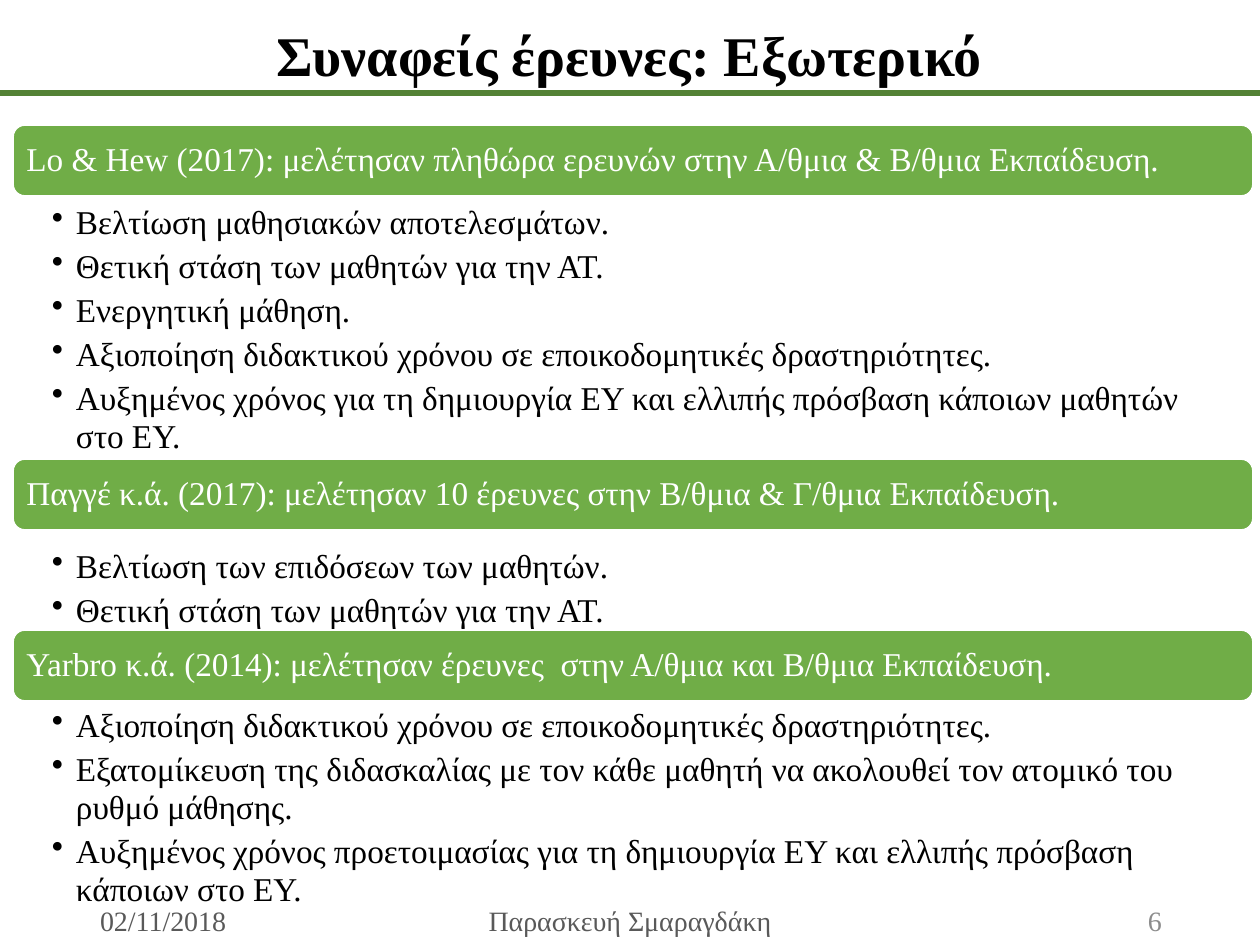
import dataclasses

import lxml.etree
import pptx
import pptx.dml.color
import pptx.enum.shapes
import pptx.enum.text
import pptx.oxml.ns
import pptx.util

PX_PER_INCH = 126
FONT = "Times New Roman"
COLOURS = {
    "bar": "70AD47",
    "rule": "548235",
    "white": "FFFFFF",
    "black": "000000",
    "footer": "595959",
    "number": "8C8C8C",
}
ALIGN = pptx.enum.text.PP_ALIGN
ANCHOR = pptx.enum.text.MSO_ANCHOR


@dataclasses.dataclass(frozen=True)
class Study:
    heading: str
    findings: tuple[str, ...]
    bar_top: int
    list_top: int
    list_height: int


@dataclasses.dataclass(frozen=True)
class Footer:
    text: str
    left: int
    width: int
    align: ALIGN
    colour: str


STUDIES = (
    Study(
        "Lo & Hew (2017): μελέτησαν πληθώρα ερευνών στην Α/θμια & Β/θμια Εκπαίδευση.",
        (
            "Βελτίωση μαθησιακών αποτελεσμάτων.",
            "Θετική στάση των μαθητών για την ΑΤ.",
            "Ενεργητική μάθηση.",
            "Αξιοποίηση διδακτικού χρόνου σε εποικοδομητικές δραστηριότητες.",
            "Αυξημένος χρόνος για τη δημιουργία ΕΥ και ελλιπής πρόσβαση κάποιων μαθητών στο ΕΥ.",
        ),
        bar_top=125, list_top=200, list_height=239,
    ),
    Study(
        "Παγγέ κ.ά. (2017): μελέτησαν 10 έρευνες στην Β/θμια & Γ/θμια Εκπαίδευση.",
        (
            "Βελτίωση των επιδόσεων των μαθητών.",
            "Θετική στάση των μαθητών για την ΑΤ.",
        ),
        bar_top=459, list_top=544, list_height=81,
    ),
    Study(
        "Yarbro κ.ά. (2014): μελέτησαν έρευνες  στην Α/θμια και Β/θμια Εκπαίδευση.",
        (
            "Αξιοποίηση διδακτικού χρόνου σε εποικοδομητικές δραστηριότητες.",
            "Εξατομίκευση της διδασκαλίας με τον κάθε μαθητή να ακολουθεί τον ατομικό του ρυθμό μάθησης.",
            "Αυξημένος χρόνος προετοιμασίας για τη δημιουργία ΕΥ και ελλιπής πρόσβαση κάποιων στο ΕΥ.",
        ),
        bar_top=630, list_top=703, list_height=203,
    ),
)
FOOTERS = (
    Footer("02/11/2018", 87, 284, ALIGN.LEFT, "footer"),
    Footer("Παρασκευή Σμαραγδάκη", 417, 426, ALIGN.CENTER, "footer"),
    Footer("6", 891, 284, ALIGN.RIGHT, "number"),
)
STUDY_LEFT, STUDY_WIDTH, BAR_HEIGHT = 13, 1240, 71


def px(length: int) -> pptx.util.Emu:
    return pptx.util.Emu(round(length * 914400 / PX_PER_INCH))


def box(left: int, top: int, width: int, height: int) -> tuple:
    return px(left), px(top), px(width), px(height)


def rgb(name: str) -> pptx.dml.color.RGBColor:
    return pptx.dml.color.RGBColor.from_string(COLOURS[name])


def add_bullet(paragraph, indent: int) -> None:
    properties = paragraph._p.get_or_add_pPr()
    properties.set("marL", str(px(indent)))
    properties.set("indent", str(-px(indent)))
    bullet = lxml.etree.SubElement(properties, pptx.oxml.ns.qn("a:buChar"))
    bullet.set("char", "•")


def write_text(shape, *lines: str, size: int, colour: str, bold: bool = False,
               align: ALIGN = ALIGN.LEFT, anchor: ANCHOR = ANCHOR.MIDDLE,
               margins: tuple[int, int, int, int] = (13, 6, 13, 6),
               wrap: bool = True, line_spacing: float = 1.0,
               space_after: float = 0, bullet_indent: int = 0) -> None:
    frame = shape.text_frame
    frame.auto_size = pptx.enum.text.MSO_AUTO_SIZE.NONE
    frame.word_wrap = wrap
    frame.vertical_anchor = anchor
    (frame.margin_left, frame.margin_top,
     frame.margin_right, frame.margin_bottom) = map(px, margins)
    for index, line in enumerate(lines):
        paragraph = frame.add_paragraph() if index else frame.paragraphs[0]
        paragraph.alignment = align
        paragraph.line_spacing = line_spacing
        paragraph.space_before = pptx.util.Pt(0)
        paragraph.space_after = pptx.util.Pt(space_after)
        if bullet_indent:
            add_bullet(paragraph, bullet_indent)
        run = paragraph.add_run()
        run.text = line
        run.font.name = FONT
        run.font.size = pptx.util.Pt(size)
        run.font.bold = bold
        run.font.color.rgb = rgb(colour)


def add_study(slide, study: Study) -> None:
    bar = slide.shapes.add_shape(
        pptx.enum.shapes.MSO_SHAPE.ROUNDED_RECTANGLE,
        *box(STUDY_LEFT, study.bar_top, STUDY_WIDTH, BAR_HEIGHT))
    bar.shadow.inherit = False
    bar.fill.solid()
    bar.fill.fore_color.rgb = rgb("bar")
    bar.line.color.rgb = rgb("white")
    bar.line.width = pptx.util.Pt(1)
    # The preset's text area is already inset by about 3 px
    write_text(bar, study.heading, size=19, colour="white",
               margins=(10, 10, 10, 10), line_spacing=0.9)

    findings = slide.shapes.add_textbox(
        *box(STUDY_LEFT, study.list_top, STUDY_WIDTH, study.list_height))
    write_text(findings, *study.findings, size=19, colour="black",
               anchor=ANCHOR.TOP, margins=(39, 4, 19, 4),
               line_spacing=0.95, space_after=3.5, bullet_indent=24)


def add_rule(slide, top: int, width: int) -> None:
    rule = slide.shapes.add_connector(
        pptx.enum.shapes.MSO_CONNECTOR.STRAIGHT, px(0), px(top), px(width), px(top))
    rule.line.color.rgb = rgb("rule")
    rule.line.width = pptx.util.Pt(3)
    lxml.etree.SubElement(rule._element.spPr, pptx.oxml.ns.qn("a:effectLst"))


def add_footer(slide, footer: Footer) -> None:
    shape = slide.shapes.add_textbox(*box(footer.left, 895, footer.width, 50))
    write_text(shape, footer.text, size=16, colour=footer.colour, align=footer.align)


def main() -> None:
    presentation = pptx.Presentation()
    presentation.slide_width, presentation.slide_height = px(1260), px(945)
    slide = presentation.slides.add_slide(presentation.slide_layouts[5])

    # Title and the rule below it
    title = slide.shapes.title
    title.left, title.top, title.width, title.height = box(261, 14, 737, 80)
    write_text(title, "Συναφείς έρευνες: Εξωτερικό", size=32, colour="black",
               bold=True, align=ALIGN.CENTER, wrap=False)
    add_rule(slide, top=93, width=1260)

    # Studies with their findings
    for study in STUDIES:
        add_study(slide, study)

    # Date, author and slide number
    for footer in FOOTERS:
        add_footer(slide, footer)

    presentation.save("out.pptx")


if __name__ == "__main__":
    main()
